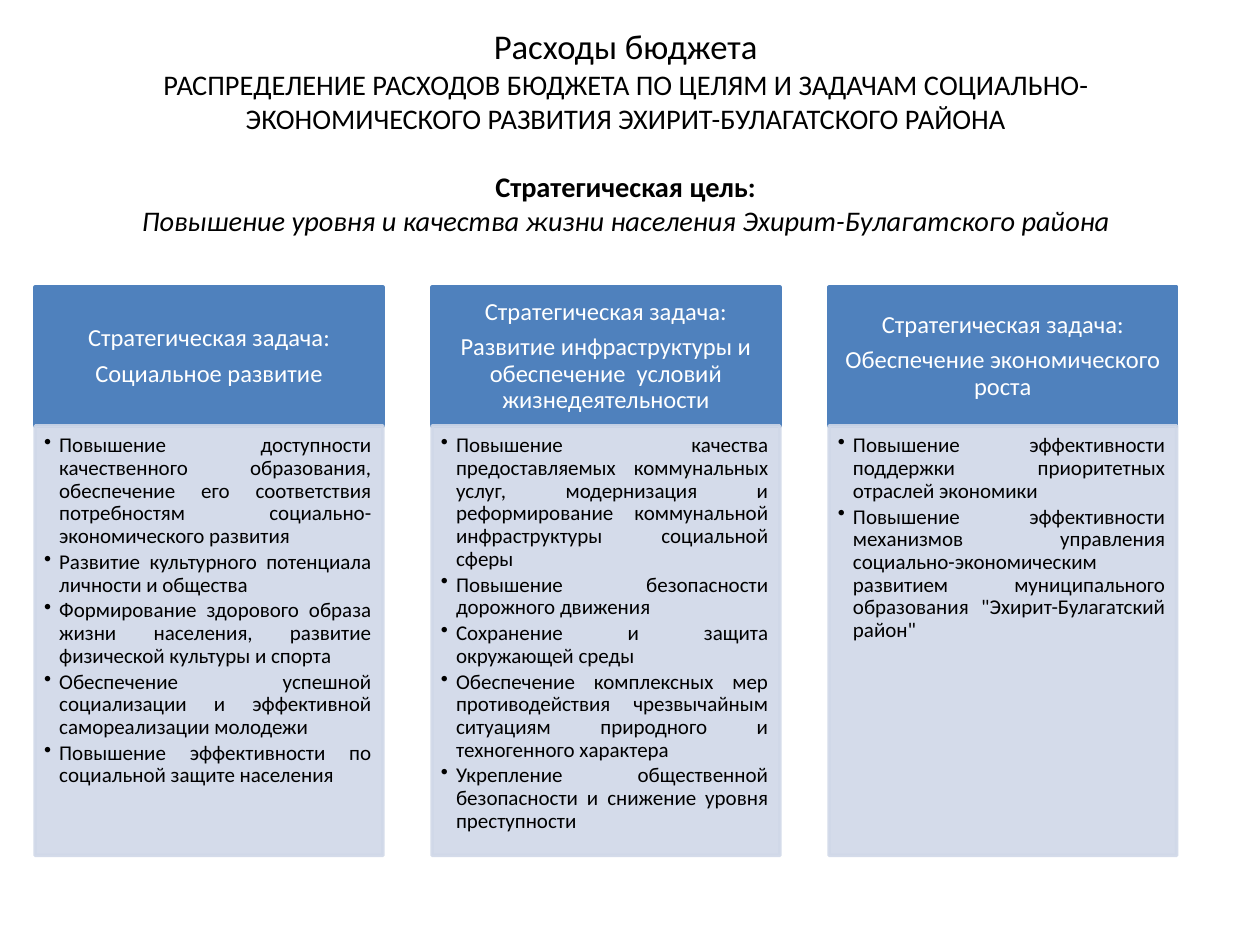
"""Build the slide on budget spending by strategic goal and task."""
from lxml import etree
from pptx import Presentation
from pptx import util as u
from pptx.dml.color import RGBColor
from pptx.enum import shapes, text
from pptx.oxml.ns import qn

TITLE = [
    ("Расходы бюджета", dict(size=19.8)),
    ("РАСПРЕДЕЛЕНИЕ РАСХОДОВ БЮДЖЕТА ПО ЦЕЛЯМ И ЗАДАЧАМ СОЦИАЛЬНО-ЭКОНОМИЧЕСКОГО "
     "РАЗВИТИЯ ЭХИРИТ-БУЛАГАТСКОГО РАЙОНА", {}),
    ("Стратегическая цель:", dict(bold=True, before=19.5)),
    ("Повышение уровня и качества жизни населения Эхирит-Булагатского района",
     dict(italic=True)),
]
HEADING = "Стратегическая задача:"
TASKS = [
    ("Социальное развитие", [
        "Повышение доступности качественного образования, обеспечение его соответствия "
        "потребностям социально-экономического развития",
        "Развитие культурного потенциала личности и общества",
        "Формирование здорового образа жизни населения, развитие физической культуры и спорта",
        "Обеспечение успешной социализации и эффективной самореализации молодежи",
        "Повышение эффективности по социальной защите населения",
    ]),
    ("Развитие инфраструктуры и обеспечение  условий жизнедеятельности", [
        "Повышение качества предоставляемых коммунальных услуг, модернизация и "
        "реформирование коммунальной инфраструктуры социальной сферы",
        "Повышение безопасности дорожного движения",
        "Сохранение и защита окружающей среды",
        "Обеспечение комплексных мер противодействия чрезвычайным ситуациям природного "
        "и техногенного характера",
        "Укрепление общественной безопасности и снижение уровня преступности",
    ]),
    ("Обеспечение экономического роста", [
        "Повышение эффективности поддержки приоритетных отраслей экономики",
        "Повышение эффективности механизмов управления социально-экономическим развитием "
        "муниципального образования \"Эхирит-Булагатский район\"",
    ]),
]
LEFT, TOP, PITCH, WIDTH = 0.28, 2.28, 3.15, 2.76
HEAD_H, BODY_H = 1.1, 3.41
BLUE, PALE, WHITE, BLACK = "4F81BD", "D0D8E8", "FFFFFF", "000000"


def color(value):
    return RGBColor.from_string(value)


def add_text(tf, content, size=16.2, ink=BLACK, bold=False, italic=False, before=0,
             after=0, spacing=1.0, align=text.PP_ALIGN.CENTER, bullet=False):
    p = tf.paragraphs[0] if not tf.paragraphs[0].runs else tf.add_paragraph()
    if bullet:
        p.level = 1
        pPr = p._p.get_or_add_pPr()
        pPr.set("marL", str(u.Inches(0.12)))
        pPr.set("indent", str(-u.Inches(0.12)))
        etree.SubElement(pPr, qn("a:buChar"), char="•")
    p.alignment, p.line_spacing = align, spacing
    p.space_before, p.space_after = u.Pt(before), u.Pt(after)
    r = p.add_run()
    r.text = content
    f = r.font
    f.name, f.size, f.bold, f.italic = "Calibri", u.Pt(size), bold, italic
    f.color.rgb = color(ink)


def set_frame(tf, anchor, insets):
    tf.word_wrap, tf.auto_size = True, text.MSO_AUTO_SIZE.NONE
    tf.vertical_anchor = anchor
    tf.margin_left, tf.margin_top, tf.margin_right, tf.margin_bottom = map(u.Inches, insets)


def add_box(s, x, y, h, fill, anchor, insets, alpha=None):
    sp = s.shapes.add_shape(shapes.MSO_SHAPE.RECTANGLE, *map(u.Inches, (x, y, WIDTH, h)))
    sp.shadow.inherit = False
    sp.fill.solid()
    sp.fill.fore_color.rgb = sp.line.color.rgb = color(fill)
    sp.line.width = u.Pt(2)
    if alpha:
        for clr in sp._element.spPr.iter(qn("a:srgbClr")):
            etree.SubElement(clr, qn("a:alpha"), val=str(alpha * 1000))
    set_frame(sp.text_frame, anchor, insets)
    return sp.text_frame


def main():
    prs = Presentation()
    prs.slide_width, prs.slide_height = u.Inches(10), u.Inches(7.5)
    s = prs.slides.add_slide(prs.slide_layouts[5])
    title = s.shapes.title
    title.left, title.top, title.width, title.height = map(u.Inches, (0.43, 0.13, 9.07, 1.73))
    set_frame(title.text_frame, text.MSO_ANCHOR.TOP, (0.1, 0.07, 0.1, 0.05))
    for content, style in TITLE:
        add_text(title.text_frame, content, **style)
    for i, (task, goals) in enumerate(TASKS):
        x = LEFT + i * PITCH
        tf = add_box(s, x, TOP, HEAD_H, BLUE, text.MSO_ANCHOR.MIDDLE, (0.11, 0.06, 0.11, 0.06))
        for content in (HEADING, task):
            add_text(tf, content, size=14, ink=WHITE, after=4.9, spacing=0.9)
        tf = add_box(s, x, TOP + HEAD_H, BODY_H, PALE, text.MSO_ANCHOR.TOP,
                     (0.07, 0.07, 0.09, 0.1), alpha=90)
        for goal in goals:
            add_text(tf, goal, size=12, after=1.8, spacing=0.9,
                     align=text.PP_ALIGN.JUSTIFY, bullet=True)
    prs.save("out.pptx")


if __name__ == "__main__":
    main()
